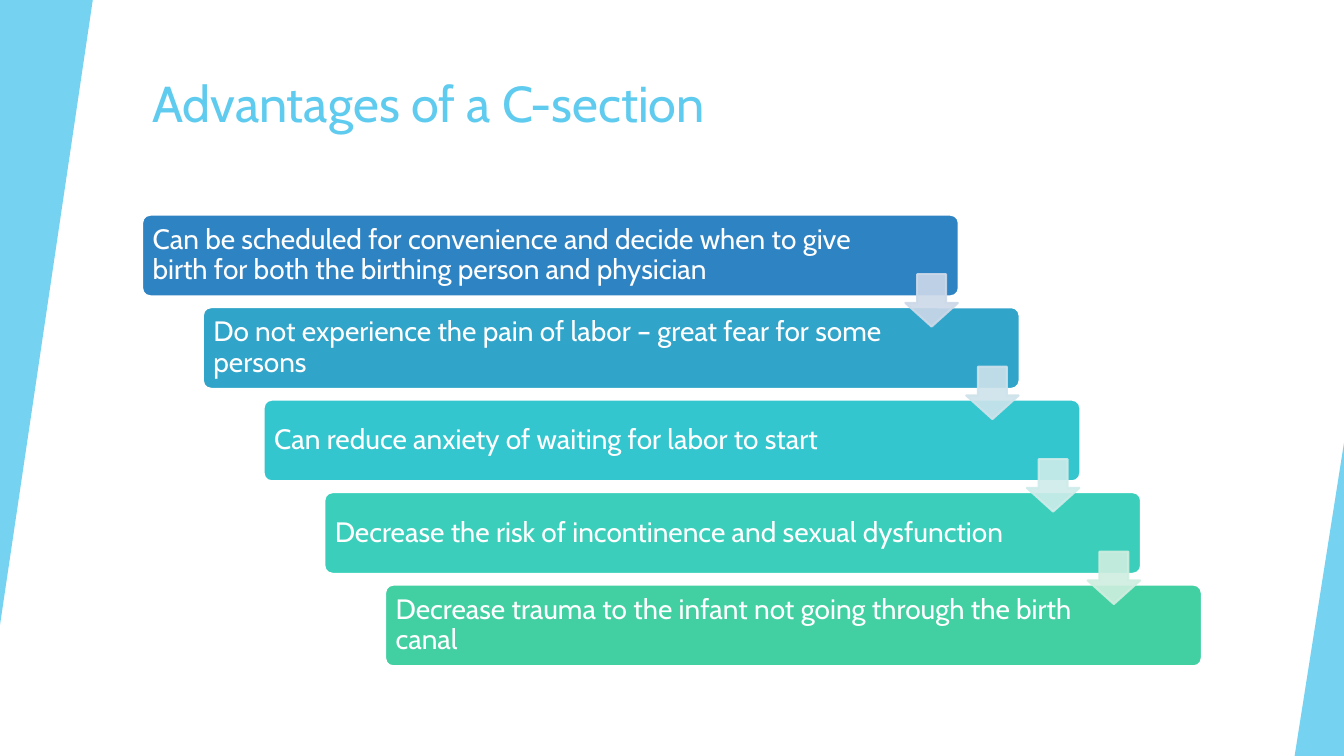
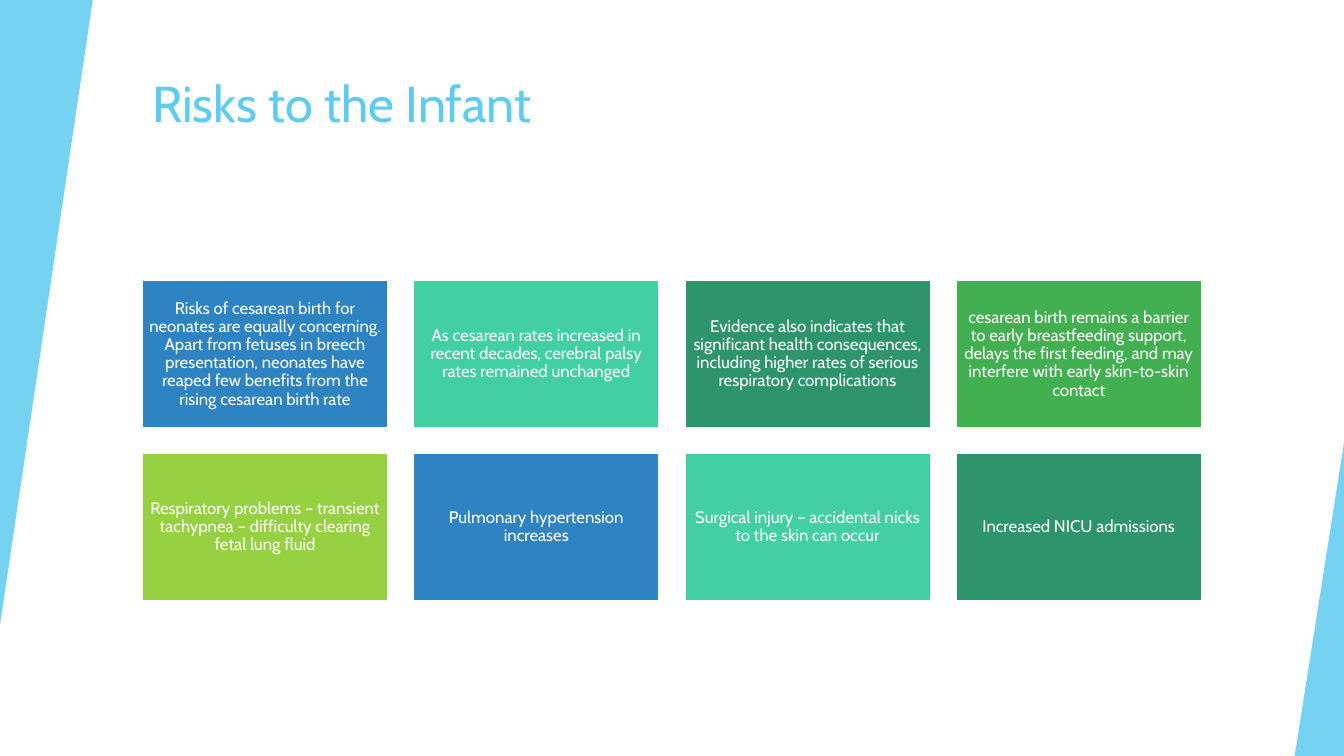
from dataclasses import dataclass
from typing import NamedTuple

from lxml.etree import SubElement
from pptx import Presentation
from pptx.dml.color import RGBColor
from pptx.dml.fill import FillFormat
from pptx.enum.shapes import MSO_SHAPE as Kind
from pptx.enum.text import MSO_ANCHOR as Anchor, PP_ALIGN as Align
from pptx.oxml.ns import qn
from pptx.shapes.autoshape import Shape
from pptx.slide import Slide
from pptx.util import Inches, Pt


@dataclass(frozen=True)
class Theme:
    font: str = "Cabin"
    sky: str = "5FCBEF"
    white: str = "FFFFFF"
    blue: str = "2E83C3"
    mint: str = "42D0A2"
    pine: str = "2E946B"
    leaf: str = "42B051"
    lime: str = "96D141"
    title: int = 36
    step: int = 20
    card: int = 12
    edge: float = 1.5
    band: int = 85
    arrow: int = 90


class Box(NamedTuple):
    left: float
    top: float
    width: float
    height: float


class Pad(NamedTuple):
    left: float
    top: float
    right: float
    bottom: float


class Step(NamedTuple):
    text: str
    fill: str
    arrow: str = ""


class Card(NamedTuple):
    text: str
    fill: str


THEME = Theme()
PAGE = Box(0, 0, 13.33, 7.5)
HEAD = Box(1.41, 0.67, 11.15, 1.2)
STAIRS = Box(1.41, 2.13, 10.51, 4.48)
GRID = Box(1.41, 2.78, 10.51, 3.18)
STEP_W, STEP_H = 8.1, 0.81
CARD_W, CARD_H = 2.44, 1.47
COLS, ROWS = 4, 2
ARROW = Box(7.57, 0.59, 0.52, 0.52)  # offset from its step, then size

STEPS = [
    Step("Can be scheduled for convenience and decide when to give birth "
         "for both the birthing person and physician", THEME.blue, "CDD9E9"),
    Step("Do not experience the pain of labor – great fear for some persons",
         "30A4C9", "CEE3EB"),
    Step("Can reduce anxiety of waiting for labor to start",
         "34C6CE", "CEECEA"),
    Step("Decrease the risk of incontinence and sexual dysfunction",
         "3BCFBB", "CFEEE0"),
    Step("Decrease trauma to the infant not going through the birth canal",
         THEME.mint),
]

CARDS = [
    Card("Risks of cesarean birth for neonates are equally concerning. Apart "
         "from fetuses in breech presentation, neonates have reaped few "
         "benefits from the rising cesarean birth rate", THEME.blue),
    Card("As cesarean rates increased in recent decades, cerebral palsy "
         "rates remained unchanged", THEME.mint),
    Card("Evidence also indicates that significant health consequences, "
         "including higher rates of serious respiratory complications",
         THEME.pine),
    Card("cesarean birth remains a barrier to early breastfeeding support, "
         "delays the first feeding, and may interfere with early "
         "skin-to-skin contact", THEME.leaf),
    Card("Respiratory problems – transient tachypnea – difficulty clearing "
         "fetal lung fluid", THEME.lime),
    Card("Pulmonary hypertension increases", THEME.blue),
    Card("Surgical injury – accidental nicks to the skin can occur",
         THEME.mint),
    Card("Increased NICU admissions", THEME.pine),
]


def paint(fill: FillFormat, color: str, alpha: int = 100) -> None:
    """Set a solid fill; alpha is the opacity in percent."""
    fill.solid()
    fill.fore_color.rgb = RGBColor.from_string(color)
    if alpha < 100:
        node = fill._xPr.find(f".//{qn('a:srgbClr')}")
        SubElement(node, qn("a:alpha"), val=str(alpha * 1000))


def add_shape(slide: Slide, kind: Kind, box: Box, fill: str, edge: str = "",
              alpha: int = 100, adjust: tuple[float, ...] = ()) -> Shape:
    shape = slide.shapes.add_shape(kind, *map(Inches, box))
    shape.shadow.inherit = False
    for i, val in enumerate(adjust):
        shape.adjustments[i] = val
    paint(shape.fill, fill, alpha)
    if edge:
        paint(shape.line.fill, edge, alpha)
        shape.line.width = Pt(THEME.edge)
    else:
        shape.line.fill.background()
    return shape


def write(shape: Shape, text: str, size: int, color: str, pad: Pad,
          align: Align = Align.LEFT, anchor: Anchor = Anchor.MIDDLE,
          lead: float = 0.9) -> None:
    frame = shape.text_frame
    frame.text = text
    frame.word_wrap = True
    frame.vertical_anchor = anchor
    frame.margin_left, frame.margin_top = Inches(pad.left), Inches(pad.top)
    frame.margin_right = Inches(pad.right)
    frame.margin_bottom = Inches(pad.bottom)
    para = frame.paragraphs[0]
    para.alignment = align
    para.line_spacing = lead
    font = para.runs[0].font
    font.name, font.size = THEME.font, Pt(size)
    font.color.rgb = RGBColor.from_string(color)


def add_page(deck: Presentation, title: str) -> Slide:
    """Add a blank slide with the title and both side bands."""
    slide = deck.slides.add_slide(deck.slide_layouts[6])
    paint(slide.background.fill, THEME.white)
    head = slide.shapes.add_textbox(*map(Inches, HEAD))
    write(head, title, THEME.title, THEME.sky, Pad(0.1, 0.05, 0.1, 0.05),
          anchor=Anchor.TOP, lead=1.0)
    for box, turn in ((Box(0, 0, 0.92, 6.2), 180),
                      (Box(PAGE.width - 0.49, 4.39, 0.49, 3.11), 0)):
        band = add_shape(slide, Kind.ISOSCELES_TRIANGLE, box, THEME.sky,
                         alpha=THEME.band, adjust=(1.0,))
        band.rotation = turn
    return slide


def add_stairs(slide: Slide, steps: list[Step]) -> None:
    last = len(steps) - 1
    dx = (STAIRS.width - STEP_W) / last
    dy = (STAIRS.height - STEP_H) / last
    spots = [Box(STAIRS.left + i * dx, STAIRS.top + i * dy, STEP_W, STEP_H)
             for i in range(len(steps))]
    for step, spot in zip(steps, spots):
        bar = add_shape(slide, Kind.ROUNDED_RECTANGLE, spot, step.fill,
                        THEME.white, adjust=(0.1,))
        write(bar, step.text, THEME.step, THEME.white,
              Pad(0.08, 0.08, 1.0, 0.08))
    for step, spot in zip(steps[:-1], spots):
        box = Box(spot.left + ARROW.left, spot.top + ARROW.top,
                  ARROW.width, ARROW.height)
        add_shape(slide, Kind.DOWN_ARROW, box, step.arrow, step.arrow,
                  THEME.arrow, (0.55, 0.45))


def add_cards(slide: Slide, cards: list[Card]) -> None:
    dx = (GRID.width - CARD_W) / (COLS - 1)
    dy = (GRID.height - CARD_H) / (ROWS - 1)
    for i, card in enumerate(cards):
        row, col = divmod(i, COLS)
        box = Box(GRID.left + col * dx, GRID.top + row * dy, CARD_W, CARD_H)
        tile = add_shape(slide, Kind.RECTANGLE, box, card.fill, THEME.white)
        write(tile, card.text, THEME.card, THEME.white,
              Pad(0.05, 0.05, 0.05, 0.05), Align.CENTER)


def main() -> None:
    deck = Presentation()
    deck.slide_width = Inches(PAGE.width)
    deck.slide_height = Inches(PAGE.height)
    add_stairs(add_page(deck, "Advantages of a C-section"), STEPS)
    add_cards(add_page(deck, "Risks to the Infant"), CARDS)
    deck.save("out.pptx")


if __name__ == "__main__":
    main()
